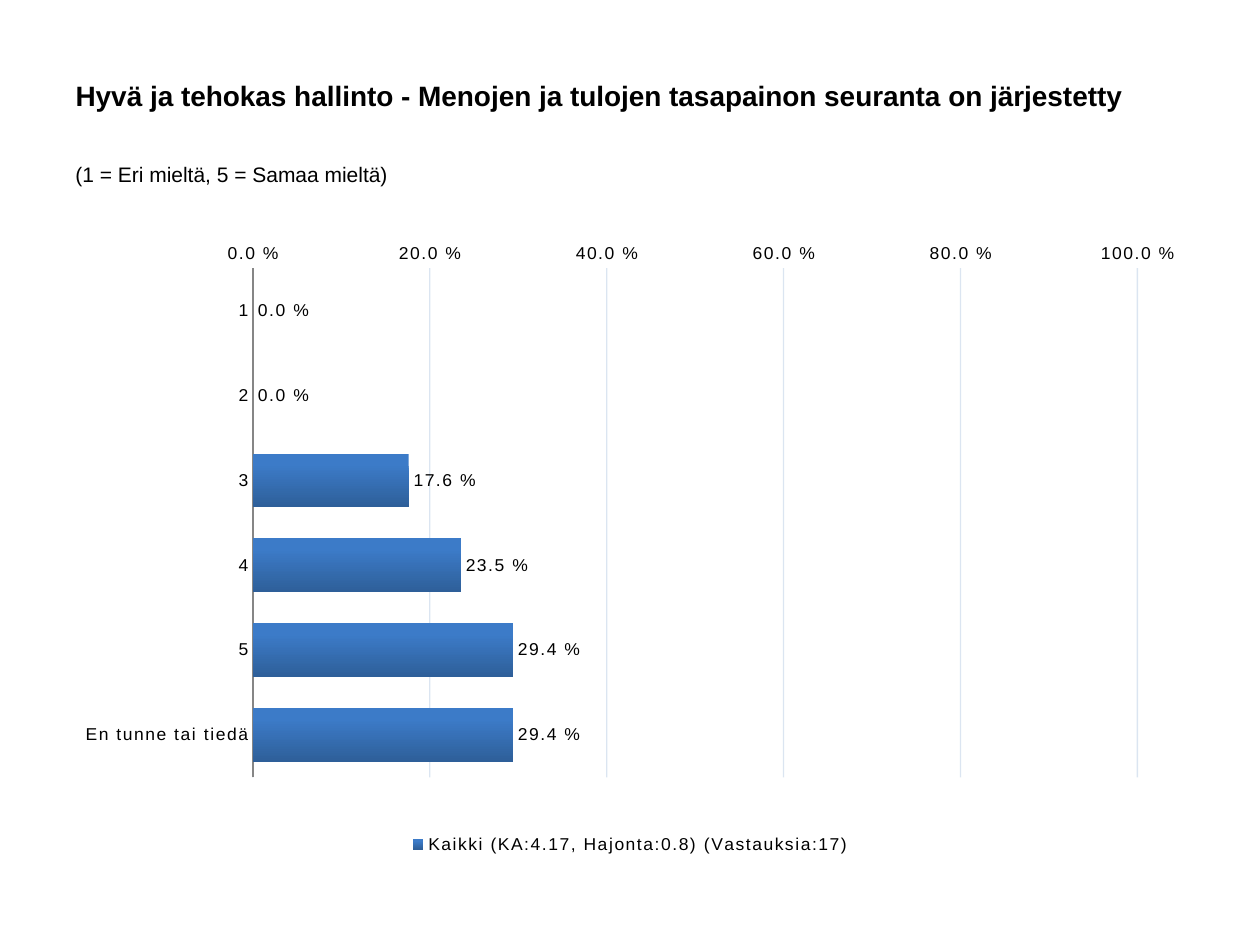
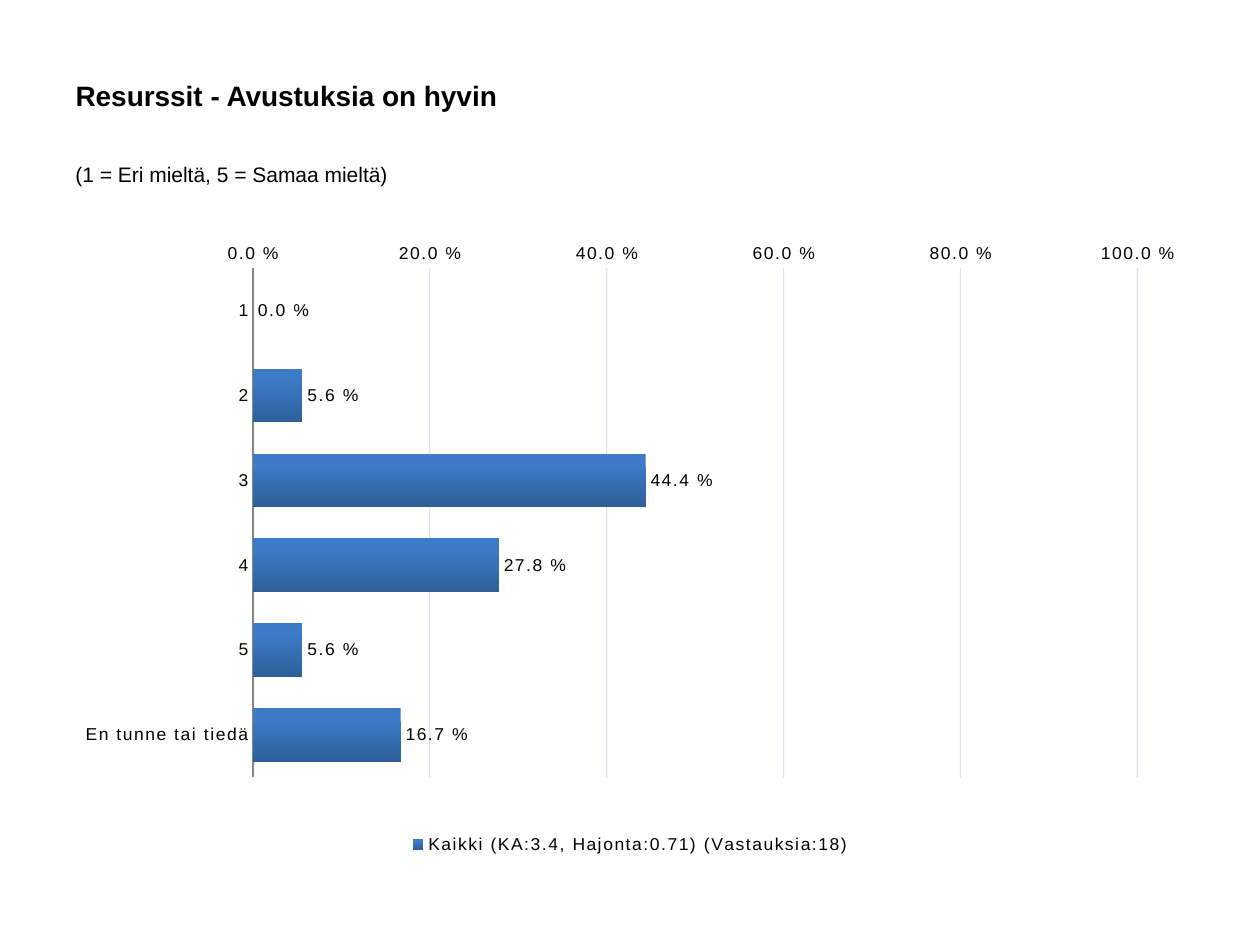
from lxml.etree import SubElement
from pptx import Presentation
from pptx.chart.data import CategoryChartData
from pptx.dml.color import RGBColor
from pptx.enum.chart import (
    XL_AXIS_CROSSES as Crosses,
    XL_CHART_TYPE as ChartType,
    XL_LABEL_POSITION as LabelPosition,
    XL_LEGEND_POSITION as LegendPosition,
    XL_TICK_MARK as TickMark,
)
from pptx.enum.text import MSO_ANCHOR as Anchor, PP_ALIGN as Align
from pptx.oxml import parse_xml
from pptx.oxml.ns import nsdecls, qn
from pptx.util import Emu, Pt

PX_PER_INCH = 126
SLIDE_WIDTH, SLIDE_HEIGHT = 1260, 945
MARGIN = 63
CONTENT_WIDTH = SLIDE_WIDTH - 2 * MARGIN

FONT = "Arial"
BLACK = RGBColor(0x00, 0x00, 0x00)
GRID_BLUE = RGBColor(0x4F, 0x81, 0xBD)
AXIS_GREY = RGBColor(0x86, 0x86, 0x86)
BAR_TOP = RGBColor(0x3C, 0x7B, 0xC8)
BAR_BOTTOM = RGBColor(0x2E, 0x5F, 0x99)

PERCENT = "0.0\\ %"
SCALE_NOTE = "(1 = Eri mieltä, 5 = Samaa mieltä)"
ANSWERS = ("1", "2", "3", "4", "5", "En tunne tai tiedä")
QUESTIONS = (
    (
        "Hyvä ja tehokas hallinto - Menojen ja tulojen tasapainon seuranta on järjestetty",
        "Kaikki (KA:4.17, Hajonta:0.8) (Vastauksia:17)",
        (0, 0, 0.176, 0.235, 0.294, 0.294),
    ),
    (
        "Resurssit - Avustuksia on hyvin",
        "Kaikki (KA:3.4, Hajonta:0.71) (Vastauksia:18)",
        (0, 0.056, 0.444, 0.278, 0.056, 0.167),
    ),
)


def px(length):
    return Emu(round(length * 914400 / PX_PER_INCH))


def content_box(top, height):
    """Left, top, width and height of a block between the side margins."""
    return px(MARGIN), px(top), px(CONTENT_WIDTH), px(height)


def style_font(font, size, bold=False):
    font.name = FONT
    font.size = Pt(size)
    font.bold = bold
    font.color.rgb = BLACK


def write_text(shape, text, size, bold=False, anchor=Anchor.TOP):
    frame = shape.text_frame
    frame.word_wrap = True
    frame.vertical_anchor = anchor
    paragraph = frame.paragraphs[0]
    paragraph.alignment = Align.LEFT
    run = paragraph.add_run()
    run.text = text
    style_font(run.font, size, bold)
    return paragraph


def add_title(slide, text):
    title = slide.shapes.title
    title.left, title.top, title.width, title.height = content_box(45, 100)
    write_text(title, text, 16, bold=True, anchor=Anchor.MIDDLE)


def add_scale_note(slide):
    note = slide.shapes.add_textbox(*content_box(155, 74))
    write_text(note, SCALE_NOTE, 12).space_before = Pt(2.4)


def style_category_axis(axis):
    axis.reverse_order = True
    axis.crosses = Crosses.MAXIMUM
    axis.format.line.color.rgb = AXIS_GREY
    axis.format.line.width = Pt(0.75)


def style_value_axis(axis):
    axis.minimum_scale, axis.maximum_scale, axis.major_unit = 0, 1, 0.2
    axis.tick_labels.number_format = PERCENT
    axis.tick_labels.number_format_is_linked = False
    axis.format.line.fill.background()
    grid_line = axis.major_gridlines.format.line
    grid_line.color.rgb = GRID_BLUE
    grid_line.width = Pt(0.75)
    for color in axis.major_gridlines.format.line.fill.fore_color, :
        color.rgb = GRID_BLUE
    grid = axis.major_gridlines
    for color in axis_grid_colors(axis):
        SubElement(color, qn("a:alpha"), val="20000")


def axis_grid_colors(axis):
    """Colour elements of the gridlines, for setting transparency."""
    return axis._element.find(qn("c:majorGridlines")).iter(qn("a:srgbClr"))


def style_bars(plot):
    plot.gap_width = 58
    plot.vary_by_categories = False
    fill = plot.series[0].format.fill
    fill.gradient()
    fill.gradient_angle = 270
    top, bottom = fill.gradient_stops
    top.color.rgb, top.position = BAR_TOP, 0.2
    bottom.color.rgb, bottom.position = BAR_BOTTOM, 1
    plot.has_data_labels = True
    labels = plot.data_labels
    labels.show_value = True
    labels.position = LabelPosition.OUTSIDE_END
    labels.number_format = PERCENT
    labels.number_format_is_linked = False
    style_font(labels.font, 10)


def fix_plot_area(chart, **fractions):
    """Place the inner plot area by fractions (x, y, w, h) of the chart."""
    values = "".join(f'<c:{key} val="{value}"/>' for key, value in fractions.items())
    layout = parse_xml(
        f'<c:layout {nsdecls("c")}><c:manualLayout><c:layoutTarget val="inner"/>'
        f'<c:xMode val="edge"/><c:yMode val="edge"/>{values}</c:manualLayout></c:layout>'
    )
    plot_area = chart.element.find(".//" + qn("c:plotArea"))
    for automatic in plot_area.findall(qn("c:layout")):
        plot_area.remove(automatic)
    plot_area.insert(0, layout)


def space_letters(chart, hundredths):
    for properties in chart.element.iter(qn("a:defRPr")):
        properties.set("spc", str(hundredths))


def add_answer_chart(slide, series_name, shares):
    data = CategoryChartData(number_format=PERCENT)
    data.categories = ANSWERS
    data.add_series(series_name, shares)
    frame = slide.shapes.add_chart(ChartType.BAR_CLUSTERED, *content_box(244, 615), data)
    chart = frame.chart
    chart.has_title = False
    style_font(chart.font, 10)
    for axis in (chart.category_axis, chart.value_axis):
        axis.major_tick_mark = axis.minor_tick_mark = TickMark.NONE
        style_font(axis.tick_labels.font, 10)
    style_category_axis(chart.category_axis)
    style_value_axis(chart.value_axis)
    style_bars(chart.plots[0])
    chart.has_legend = True
    chart.legend.position = LegendPosition.BOTTOM
    chart.legend.include_in_layout = False
    style_font(chart.legend.font, 10)
    fix_plot_area(chart, x=0.1675, y=0.021, w=0.78, h=0.844)
    space_letters(chart, 100)


def main():
    presentation = Presentation()
    presentation.slide_width = px(SLIDE_WIDTH)
    presentation.slide_height = px(SLIDE_HEIGHT)
    title_only = presentation.slide_layouts[5]
    for question, series_name, shares in QUESTIONS:
        slide = presentation.slides.add_slide(title_only)
        add_title(slide, question)
        add_scale_note(slide)
        add_answer_chart(slide, series_name, shares)
    presentation.save("out.pptx")


if __name__ == "__main__":
    main()
